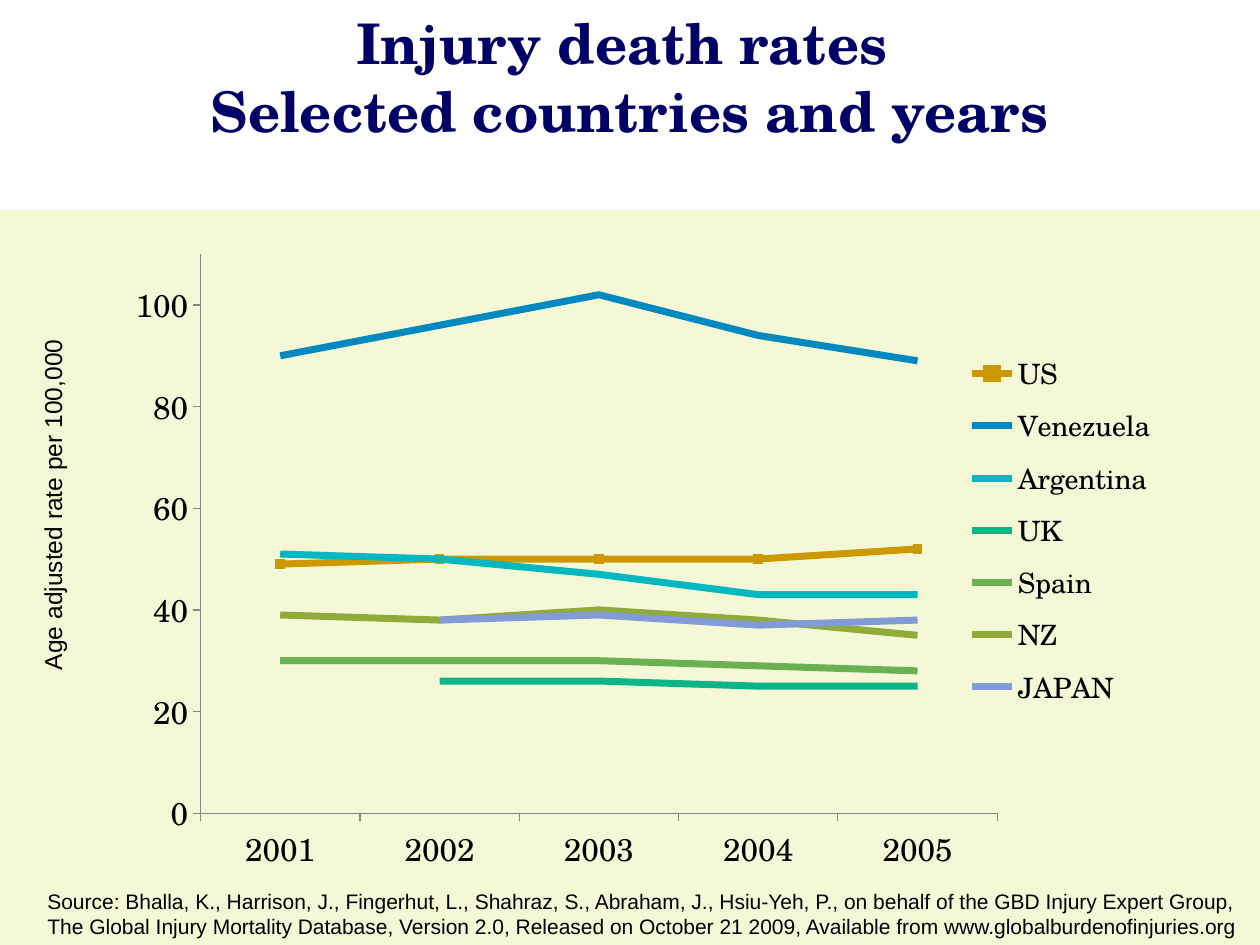
from lxml.etree import SubElement
from pptx import Presentation
from pptx.chart.data import CategoryChartData
from pptx.dml.color import RGBColor
from pptx.enum.chart import XL_CHART_TYPE, XL_LEGEND_POSITION, XL_MARKER_STYLE, XL_TICK_MARK
from pptx.enum.shapes import MSO_SHAPE
from pptx.enum.text import MSO_ANCHOR, MSO_AUTO_SIZE, PP_ALIGN
from pptx.oxml.ns import qn
from pptx.util import Pt

BLACK = RGBColor(0x00, 0x00, 0x00)
NAVY = RGBColor(0x00, 0x00, 0x66)
CREAM = RGBColor(0xF4, 0xF8, 0xD6)
GRAY = RGBColor(0x87, 0x87, 0x87)
GOLD = RGBColor(0xCC, 0x99, 0x00)
BLUE = RGBColor(0x00, 0x89, 0xBE)
CYAN = RGBColor(0x00, 0xB8, 0xC0)
TEAL = RGBColor(0x0C, 0xB5, 0x88)
GREEN = RGBColor(0x6A, 0xB1, 0x52)
OLIVE = RGBColor(0x91, 0xAB, 0x3B)
PERIWINKLE = RGBColor(0x82, 0x9A, 0xD6)
SERIF, SANS = "TeX Gyre Schola", "Arial"

TITLE = "Injury death rates \vSelected countries and years"
AXIS_LABEL = ["Age adjusted rate per 100,000"]
SOURCE = [
    "Source: Bhalla, K., Harrison, J., Fingerhut, L., Shahraz, S., Abraham, J., Hsiu-Yeh, P., "
    "on behalf of the GBD Injury Expert Group,",
    "The Global Injury Mortality Database, Version 2.0, Released on October 21 2009, "
    "Available from www.globalburdenofinjuries.org",
]
YEARS = ["2001", "2002", "2003", "2004", "2005"]
COUNTRIES = [
    ("US", GOLD, (49, 50, 50, 50, 52)),
    ("Venezuela", BLUE, (90, 96, 102, 94, 89)),
    ("Argentina", CYAN, (51, 50, 47, 43, 43)),
    ("UK", TEAL, (None, 26, 26, 25, 25)),
    ("Spain", GREEN, (30, 30, 30, 29, 28)),
    ("NZ", OLIVE, (39, 38, 40, 38, 35)),
    ("JAPAN", PERIWINKLE, (None, 38, 39, 37, 38)),
]
PLOT_AREA = {"x": 0.09, "y": 0.05, "w": 0.75, "h": 0.83}
LEGEND_AREA = {"x": 0.81, "y": 0.18, "w": 0.18, "h": 0.56}
VALUE_SCALE = {"minimum_scale": 0, "maximum_scale": 110, "major_unit": 20}


def set_format(target, formats):
    for name, value in formats.items():
        setattr(target, name, value)


def set_font(font, color, **formats):
    set_format(font, formats)
    font.color.rgb = color


def place(shape, left, top, width, height):
    set_format(shape, {"left": Pt(left), "top": Pt(top), "width": Pt(width), "height": Pt(height)})


def set_layout(parent, position, area, inner=False):
    """Fix the place of a chart part, in fractions of the chart."""
    for old in parent.findall(qn("c:layout")):
        parent.remove(old)
    layout = parent.makeelement(qn("c:layout"))
    parent.insert(position, layout)
    manual = SubElement(layout, qn("c:manualLayout"))
    if inner:
        SubElement(manual, qn("c:layoutTarget")).set("val", "inner")
    for side in "xy":
        SubElement(manual, qn(f"c:{side}Mode")).set("val", "edge")
    for side, fraction in area.items():
        SubElement(manual, qn(f"c:{side}")).set("val", str(fraction))


def add_text(slide, lines, box, size, wrap):
    shape = slide.shapes.add_textbox(*map(Pt, box))
    frame = shape.text_frame
    frame.text = "\n".join(lines)
    set_format(frame, {"word_wrap": wrap, "auto_size": MSO_AUTO_SIZE.SHAPE_TO_FIT_TEXT})
    for paragraph in frame.paragraphs:
        set_font(paragraph.font, BLACK, name=SANS, size=Pt(size))
    return shape


def add_rate_chart(slide):
    data = CategoryChartData()
    data.categories = YEARS
    for name, _, rates in COUNTRIES:
        data.add_series(name, rates)
    chart = slide.shapes.add_chart(
        XL_CHART_TYPE.LINE_MARKERS, Pt(60), Pt(126), Pt(607), Pt(385), data).chart
    chart.has_title = False
    set_font(chart.font, BLACK, name=SERIF, size=Pt(18))

    for axis in (chart.category_axis, chart.value_axis):
        set_format(axis, {"has_major_gridlines": False, "major_tick_mark": XL_TICK_MARK.OUTSIDE})
        axis.format.line.color.rgb = GRAY
    set_format(chart.value_axis, VALUE_SCALE)

    chart.has_legend = True
    legend = chart.legend
    set_format(legend, {"position": XL_LEGEND_POSITION.RIGHT, "include_in_layout": False})
    set_font(legend.font, BLACK, name=SERIF, size=Pt(16))

    chart.plots[0].vary_by_categories = False
    for series, (name, color, _) in zip(chart.plots[0].series, COUNTRIES):
        series.smooth = False
        series.format.line.width = Pt(4)
        series.format.line.color.rgb = color
        marker = series.marker
        if name == "US":
            set_format(marker, {"style": XL_MARKER_STYLE.SQUARE, "size": 5})
            marker.format.fill.solid()
            marker.format.fill.fore_color.rgb = color
            marker.format.line.color.rgb = color
        else:
            marker.style = XL_MARKER_STYLE.NONE

    plot_area = chart.element.find(".//" + qn("c:plotArea"))
    set_layout(plot_area, 0, PLOT_AREA, inner=True)
    set_layout(chart.element.find(".//" + qn("c:legend")), 1, LEGEND_AREA)


def main():
    presentation = Presentation()
    set_format(presentation, {"slide_width": Pt(720), "slide_height": Pt(540)})
    slide = presentation.slides.add_slide(presentation.slide_layouts[5])

    panel = slide.shapes.add_shape(MSO_SHAPE.RECTANGLE, 0, Pt(120), Pt(720), Pt(420))
    panel.shadow.inherit = False
    panel.fill.solid()
    panel.fill.fore_color.rgb = CREAM
    panel.line.fill.background()

    add_rate_chart(slide)

    title = slide.shapes.title
    place(title, 0, 0, 720, 85.5)
    frame = title.text_frame
    frame.text = TITLE
    set_format(frame, {"auto_size": MSO_AUTO_SIZE.NONE, "vertical_anchor": MSO_ANCHOR.BOTTOM})
    paragraph = frame.paragraphs[0]
    paragraph.alignment = PP_ALIGN.CENTER
    set_font(paragraph.font, NAVY, name=SERIF, size=Pt(32), bold=True)

    add_text(slide, SOURCE, (20, 504, 700, 36), 12, False)
    axis_label = add_text(slide, AXIS_LABEL, (18, 150, 32, 240), 14, True)
    axis_label.text_frame._txBody.bodyPr.set("vert", "vert270")

    presentation.save("out.pptx")


if __name__ == "__main__":
    main()
